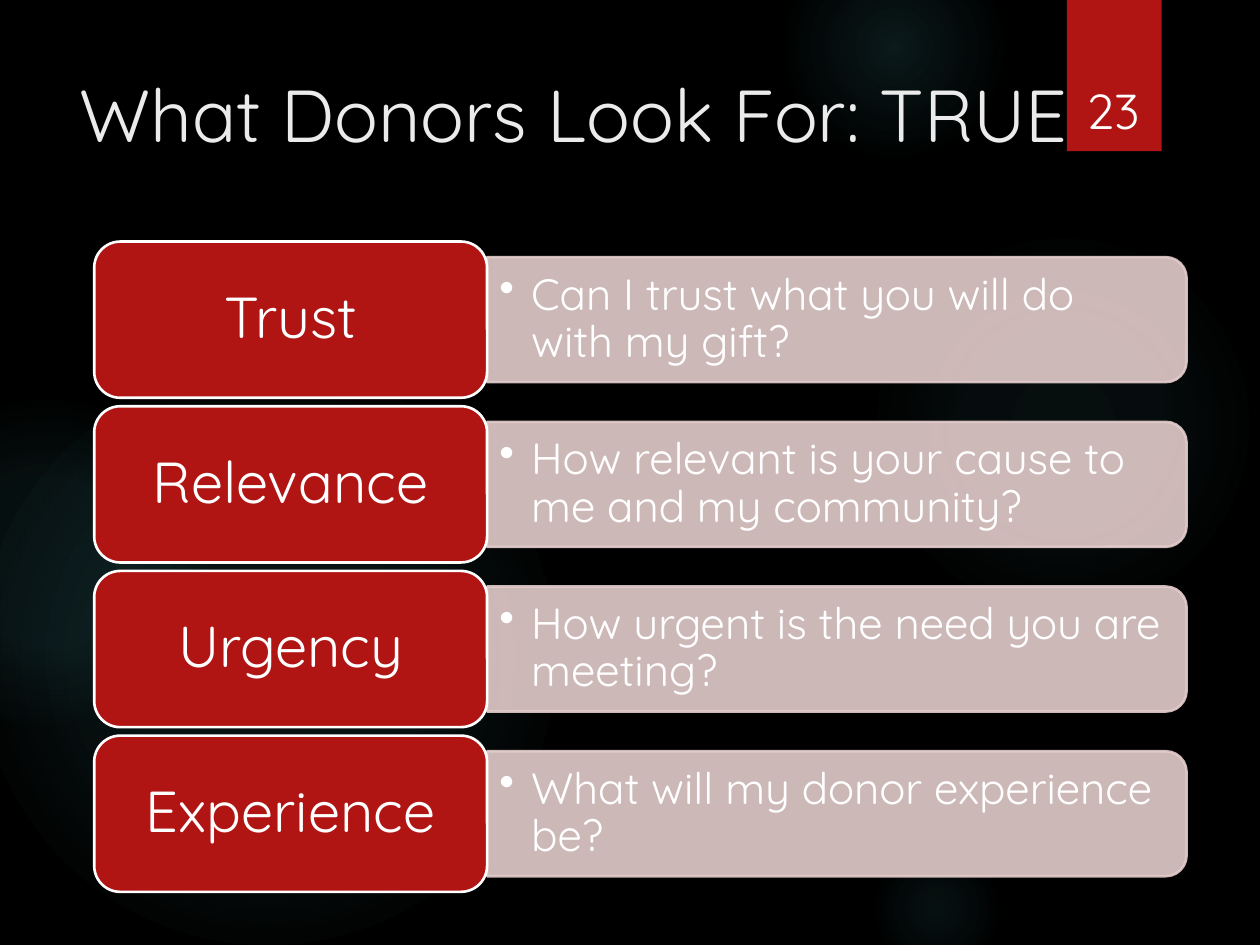
from lxml import etree
from pptx import Presentation, util as u
from pptx.dml.color import RGBColor
from pptx.enum import shapes, text
from pptx.oxml.ns import qn

SHAPE = shapes.MSO_SHAPE
ANCHOR = text.MSO_ANCHOR
ALIGN = text.PP_ALIGN


def color(hex_code):
    return RGBColor.from_string(hex_code)


def add_node(parent, tag, **attributes):
    return etree.SubElement(parent, qn(tag), {k: str(v) for k, v in attributes.items()})


class Deck:
    """Draws styled elements on the current slide."""

    font = "Quicksand"
    white, red, rose, glow_tint = "FFFFFF", "B01513", "E4CCCC", "50B9C1"

    def __init__(self, slide):
        self.slide = slide

    def background(self, hex_code):
        fill = self.slide.background.fill
        fill.solid()
        fill.fore_color.rgb = color(hex_code)

    def shape(self, kind, left, top, width, height):
        shape = self.slide.shapes.add_shape(
            kind, u.Cm(left), u.Cm(top), u.Cm(width), u.Cm(height))
        shape.shadow.inherit = False
        shape.line.fill.background()
        return shape

    def panel(self, kind, box, fill, line=None, opacity=100):
        panel = self.shape(kind, *box)
        panel.fill.solid()
        panel.fill.fore_color.rgb = color(fill)
        if line:
            panel.line.color.rgb = color(line)
            panel.line.width = u.Pt(1.5)
        if opacity < 100:
            for tint in panel._element.spPr.iter(qn("a:srgbClr")):
                add_node(tint, "a:alpha", val=opacity * 1000)
        return panel

    def glow(self, left, top, size, stops):
        glow = self.shape(SHAPE.OVAL, left, top, size, size)
        glow.fill.gradient()
        gradient = glow._element.spPr.find(qn("a:gradFill"))
        for child in list(gradient):
            gradient.remove(child)
        stop_list = add_node(gradient, "a:gsLst")
        for position, opacity in stops:
            stop = add_node(stop_list, "a:gs", pos=position * 1000)
            tint = add_node(stop, "a:srgbClr", val=self.glow_tint)
            add_node(tint, "a:alpha", val=opacity * 1000)
        circle = add_node(gradient, "a:path", path="circle")
        add_node(circle, "a:fillToRect", l=50000, t=50000, r=50000, b=50000)

    def wording(self, frame, words, size, hex_code=white, anchor=ANCHOR.MIDDLE,
                align=ALIGN.CENTER, spacing=0.9, insets=(0.25, 0.13)):
        frame.word_wrap = True
        frame.vertical_anchor = anchor
        frame.margin_left = frame.margin_right = u.Cm(insets[0])
        frame.margin_top = frame.margin_bottom = u.Cm(insets[1])
        paragraph = frame.paragraphs[0]
        paragraph.alignment = align
        paragraph.line_spacing = spacing
        run = paragraph.add_run()
        run.text = words
        run.font.name = self.font
        run.font.size = u.Pt(size)
        run.font.color.rgb = color(hex_code)
        return paragraph

    def label(self, box, words, size, **style):
        textbox = self.slide.shapes.add_textbox(*map(u.Cm, box))
        return self.wording(textbox.text_frame, words, size, **style)

    def card(self, box, words):
        card = self.panel(SHAPE.ROUNDED_RECTANGLE, box, self.red, self.white)
        self.wording(card.text_frame, words, 33, insets=(0.36, 0.18))

    def bar(self, left, middle, width, height, words):
        upright = (left + (width - height) / 2, middle - width / 2, height, width)
        bar = self.panel(SHAPE.ROUND_2_SAME_RECTANGLE, upright, self.rose, self.rose, 90)
        bar.rotation = 90
        question = self.label((left, middle - 1.14, width - 0.13, 2.28), words, 25,
                              align=ALIGN.LEFT)
        indent = u.Cm(0.64)
        properties = question._p.get_or_add_pPr()
        properties.set("marL", str(indent))
        properties.set("indent", str(-indent))
        add_node(properties, "a:buChar", char="•")


GLOWS = [
    (17.5, 4.65, 7.82, [(0, 7), (36, 6), (69, 0)]),
    (15.8, -1.27, 4.45, [(0, 14), (36, 7), (73, 0)]),
    (17.5, 16.94, 2.74, [(0, 9), (36, 5), (66, 0)]),
    (-0.43, 7.42, 11.63, [(0, 11), (36, 10), (75, 0)]),
    (-2.34, 8.05, 6.55, [(0, 8), (36, 8), (72, 0)]),
]
TRAITS = [
    ("Trust", "Can I trust what you will do with my gift?"),
    ("Relevance", "How relevant is your cause to me and my community?"),
    ("Urgency", "How urgent is the need you are meeting?"),
    ("Experience", "What will my donor experience be?"),
]
CARD_LEFT, CARD_TOP, CARD_WIDTH, CARD_HEIGHT = 1.9, 4.87, 7.92, 3.15
ROW_PITCH = 3.32


def main():
    presentation = Presentation()
    presentation.slide_width, presentation.slide_height = u.Cm(25.4), u.Cm(19.05)
    deck = Deck(presentation.slides.add_slide(presentation.slide_layouts[6]))
    deck.background("000000")
    for glow in GLOWS:
        deck.glow(*glow)
    deck.panel(SHAPE.RECTANGLE, (21.51, 0, 1.91, 3.05), deck.red)
    deck.label((1.35, 1.27, 20.6, 3.89), "What Donors Look For: TRUE", 42,
               hex_code="EBEBEB", anchor=ANCHOR.TOP, align=ALIGN.LEFT, spacing=1.0)
    for row, (trait, question) in enumerate(TRAITS):
        top = CARD_TOP + row * ROW_PITCH
        deck.bar(CARD_LEFT + CARD_WIDTH, top + CARD_HEIGHT / 2, 14.1, 2.52, question)
        deck.card((CARD_LEFT, top, CARD_WIDTH, CARD_HEIGHT), trait)
    deck.label((21.56, 0.81, 1.75, 2.13), "23", 28, anchor=ANCHOR.BOTTOM, spacing=1.0)
    presentation.save("out.pptx")


if __name__ == "__main__":
    main()
